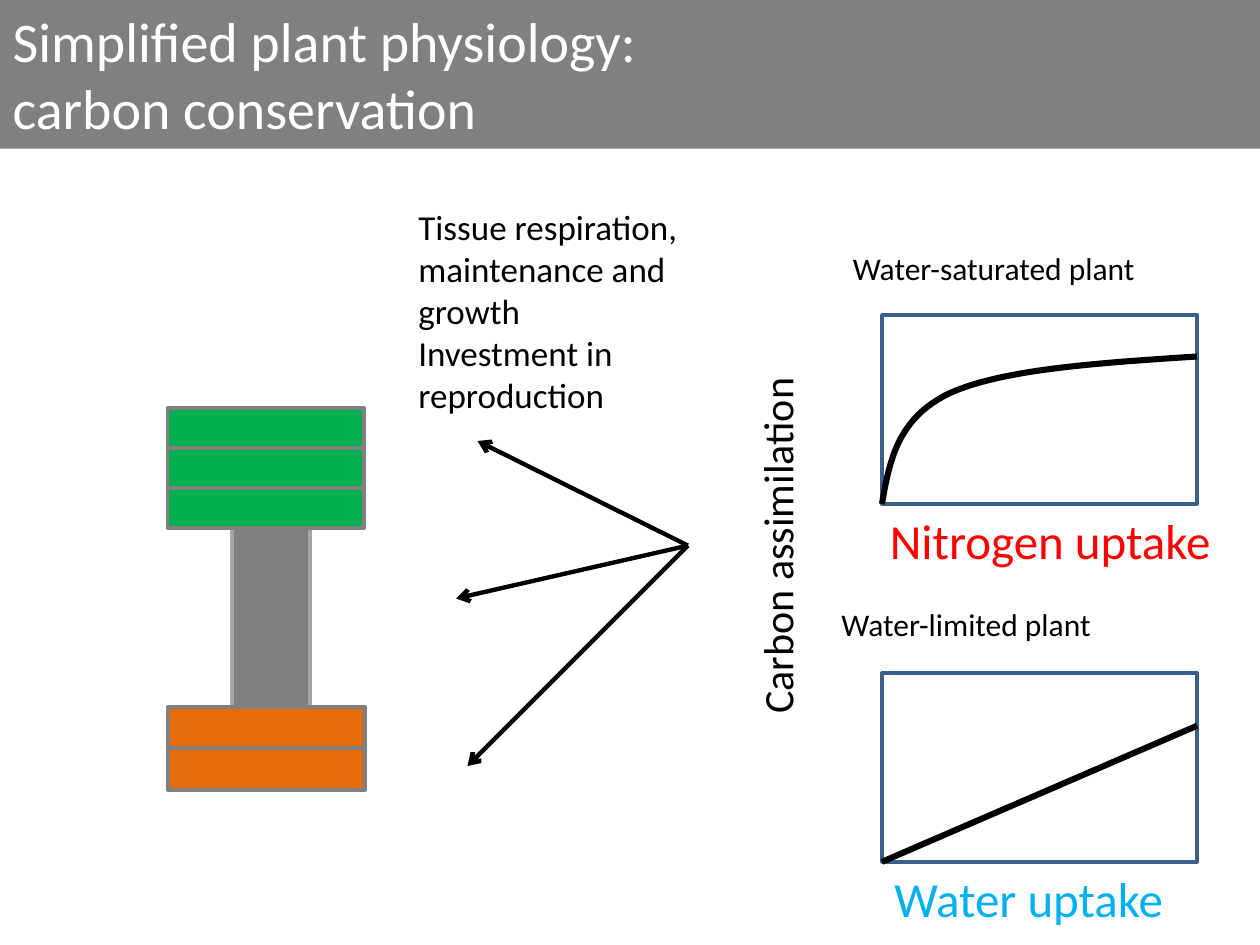
from lxml.etree import SubElement
from pptx import Presentation
from pptx.dml.color import RGBColor
from pptx.enum.shapes import MSO_CONNECTOR, MSO_SHAPE
from pptx.enum.text import MSO_ANCHOR, MSO_AUTO_SIZE, PP_ALIGN
from pptx.oxml.ns import qn
from pptx.util import Inches, Pt

WIDTH, HEIGHT = Inches(10), Inches(7.5)
COLUMN, ROW = WIDTH / 100, HEIGHT / 75
COLORS = {
    "stem": "808080", "stem_edge": "A6A6A6", "leaf": "00B050", "root": "E46C0A",
    "frame": "3A5F8C", "white": "FFFFFF", "black": "000000",
    "nitrogen": "FF0000", "water": "00B0F0",
}


def color(name):
    return RGBColor.from_string(COLORS[name])


def across(columns):
    return round(columns * COLUMN)


def down(rows):
    return round(rows * ROW)


def place(shape, left, top, width, height):
    box = {"left": across(left), "top": down(top),
           "width": across(width), "height": down(height)}
    for name, value in box.items():
        setattr(shape, name, value)


def set_line(shape, name, points):
    shape.line.color.rgb = color(name)
    shape.line.width = Pt(points)


def write(shape, lines, size, name, align=PP_ALIGN.LEFT):
    frame = shape.text_frame
    settings = {"word_wrap": True, "auto_size": MSO_AUTO_SIZE.NONE,
                "vertical_anchor": MSO_ANCHOR.TOP}
    for key, value in settings.items():
        setattr(frame, key, value)
    frame.text = "\n".join(lines)
    for paragraph in frame.paragraphs:
        paragraph.alignment = align
        paragraph.space_before = Pt(0)
        if shape.is_placeholder:
            properties = paragraph._p.get_or_add_pPr()
            properties.set("marL", "0")
            properties.set("indent", "0")
            SubElement(properties, qn("a:buNone"))
        for key, value in {"name": "Calibri", "size": Pt(size)}.items():
            setattr(paragraph.font, key, value)
        paragraph.font.color.rgb = color(name)


def add_label(slide, text, box, size, name="black", align=PP_ALIGN.LEFT, rotation=0):
    label = slide.shapes.add_textbox(0, 0, 0, 0)
    place(label, *box)
    label.rotation = rotation
    write(label, [text], size, name, align)


def add_block(slide, box, fill, edge, points):
    block = slide.shapes.add_shape(MSO_SHAPE.RECTANGLE, 0, 0, 0, 0)
    place(block, *box)
    block.shadow.inherit = False
    block.fill.solid()
    block.fill.fore_color.rgb = color(fill)
    set_line(block, edge, points)


def add_stack(slide, left, top, step, count, fill):
    for index in range(count):
        add_block(slide, (left, top + index * step, 15.6, step), fill, "stem", 2.25)


def add_line(slide, start, end, points, arrow=False):
    line = slide.shapes.add_connector(
        MSO_CONNECTOR.STRAIGHT, across(start[0]), down(start[1]), across(end[0]), down(end[1]))
    set_line(line, "black", points)
    if arrow:
        SubElement(line.line._get_or_add_ln(), qn("a:tailEnd"), type="arrow")
    SubElement(line._element.spPr, qn("a:effectLst"))


def bezier(points, t):
    weights = ((1 - t) ** 3, 3 * t * (1 - t) ** 2, 3 * t ** 2 * (1 - t), t ** 3)
    x, y = (sum(w * p[axis] for w, p in zip(weights, points)) for axis in (0, 1))
    return across(x), down(y)


def add_curve(slide, segments, points, steps=24):
    vertices = [bezier(segment, step / steps)
                for segment in segments for step in range(1, steps + 1)]
    builder = slide.shapes.build_freeform(*bezier(segments[0], 0))
    builder.add_line_segments(vertices, close=False)
    curve = builder.convert_to_shape()
    curve.shadow.inherit = False
    curve.fill.background()
    set_line(curve, "black", points)


def add_plant(slide):
    add_block(slide, (18.4, 41.9, 6.2, 14.8), "stem", "stem_edge", 2)
    add_stack(slide, 13.3, 32.4, 3.17, 3, "leaf")
    add_stack(slide, 13.35, 56.1, 3.3, 2, "root")


def add_header(slide):
    title = slide.shapes.title
    place(title, 0, 0, 100, 11.8)
    title.fill.solid()
    title.fill.fore_color.rgb = color("stem")
    write(title, ["Simplified plant physiology:", "carbon conservation"], 32, "white")


def add_carbon_uses(slide):
    body = slide.placeholders[1]
    place(body, 32.2, 15.8, 28, 17.8)
    write(body, ["Tissue respiration,", "maintenance and", "growth",
                 "Investment in reproduction"], 20, "black")
    for end in ((37.9, 35), (36.2, 47.5), (37.1, 60.8)):
        add_line(slide, (54.6, 43.3), end, 2.5, arrow=True)


def add_graphs(slide):
    for top in (25, 53.4):
        add_block(slide, (70, top, 25, 15), "white", "frame", 2)
    add_curve(slide, [
        ((70, 40), (70.6, 36.6), (71.2, 33.2), (75.4, 31.2)),
        ((75.4, 31.2), (79.6, 29.3), (87.3, 28.8), (95, 28.3)),
    ], 3.5)
    add_line(slide, (70, 68.4), (95, 57.6), 3.5)
    add_label(slide, "Carbon assimilation", (45, 40.8, 33.3, 5), 24,
              align=PP_ALIGN.CENTER, rotation=270)
    add_label(slide, "Water-saturated plant", (66.7, 19.3, 25.8, 4), 18)
    add_label(slide, "Water-limited plant", (65.8, 47.5, 25.8, 4), 18)
    add_label(slide, "Nitrogen uptake", (69.2, 40, 28.3, 5.7), 28, "nitrogen", PP_ALIGN.CENTER)
    add_label(slide, "Water uptake", (70, 68.4, 25, 5.7), 28, "water")


def main():
    presentation = Presentation()
    presentation.slide_width, presentation.slide_height = WIDTH, HEIGHT
    slide = presentation.slides.add_slide(presentation.slide_layouts[1])
    add_plant(slide)
    add_header(slide)
    add_carbon_uses(slide)
    add_graphs(slide)
    presentation.save("out.pptx")


if __name__ == "__main__":
    main()
